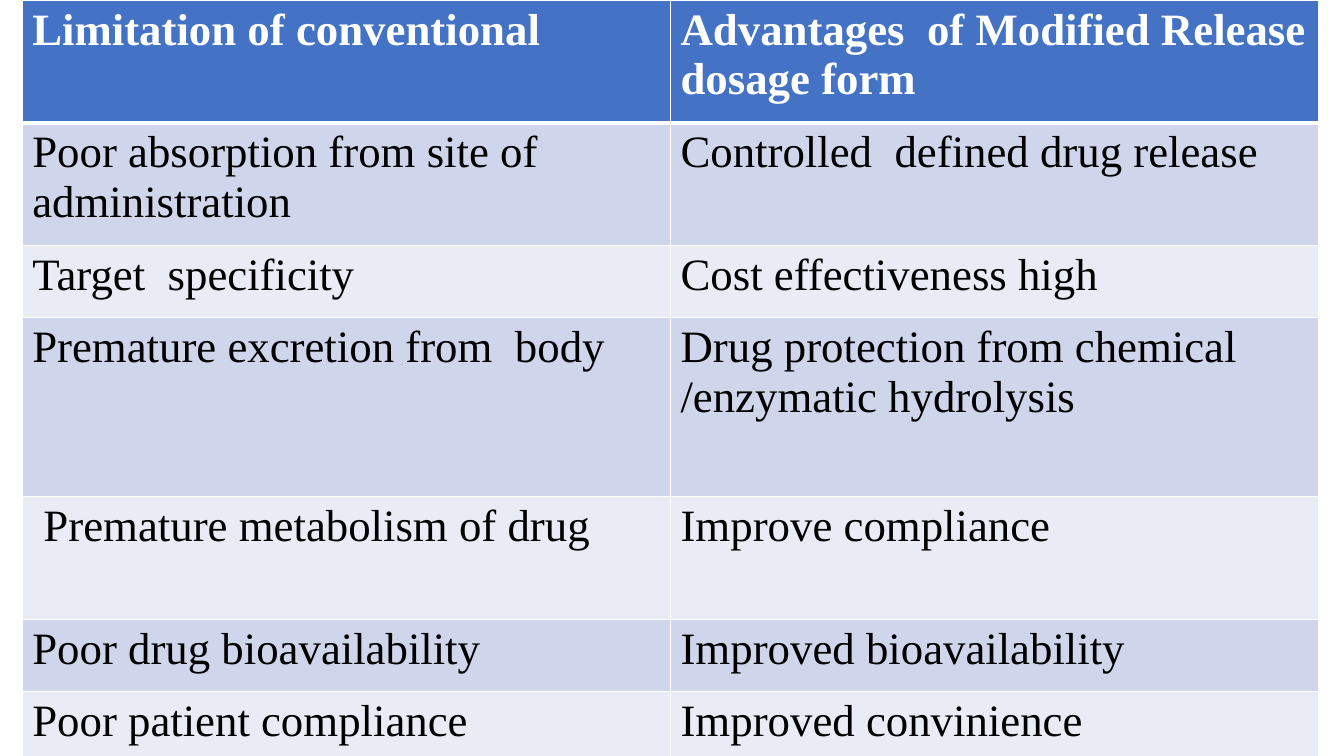
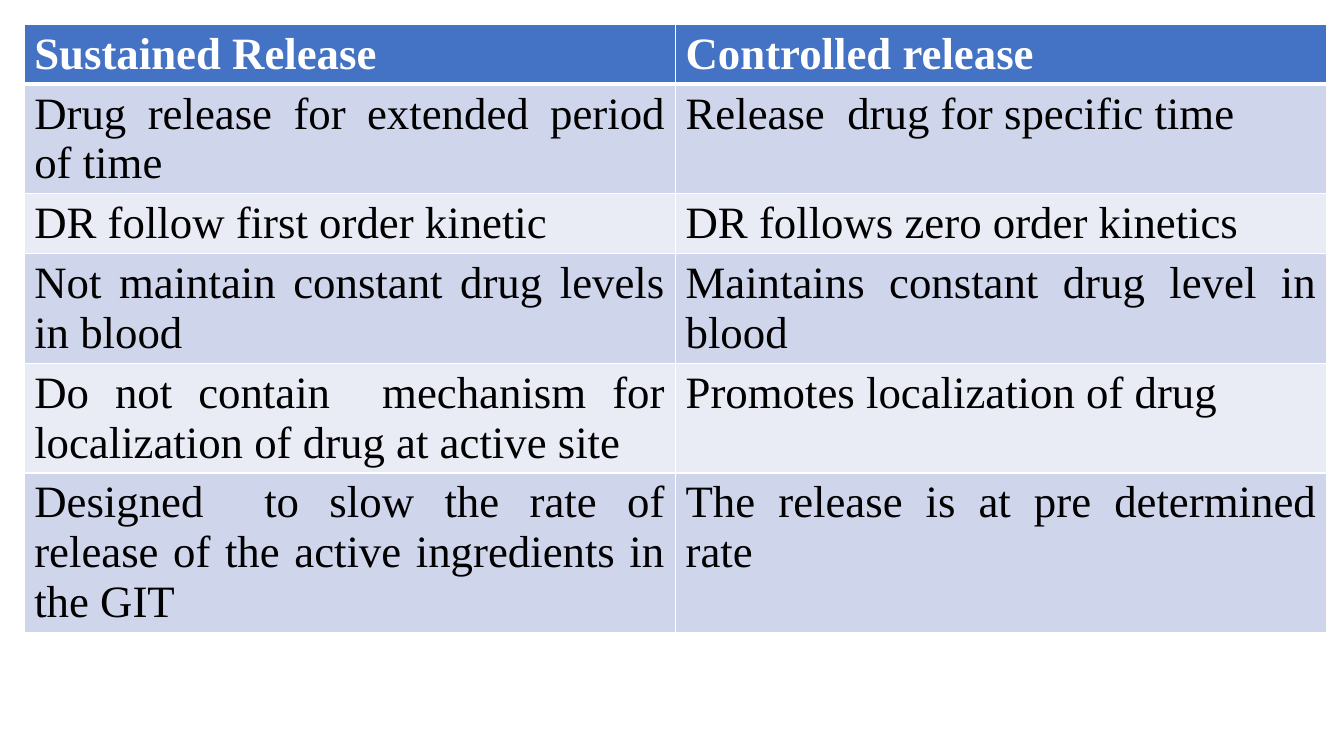
"""Two comparison tables on modified-release dosage forms."""
from dataclasses import dataclass

import lxml.etree
import pptx
import pptx.dml.color
import pptx.enum.text
import pptx.oxml.ns
import pptx.slide
import pptx.table
import pptx.util


@dataclass(frozen=True)
class Theme:
    font: str = "Times New Roman"
    size: float = 32
    header_fill: str = "4472C4"
    header_text: str = "FFFFFF"
    body_text: str = "000000"
    bands: tuple[str, str] = ("CFD5EA", "E9EBF5")
    border: str = "FFFFFF"
    thin: float = 1
    thick: float = 3


@dataclass(frozen=True)
class Row:
    height: float
    left: str
    right: str


@dataclass(frozen=True)
class Comparison:
    left: float
    top: float
    column: float
    align: pptx.enum.text.PP_ALIGN
    rows: tuple[Row, ...]


THEME = Theme()
SLIDE_WIDTH, SLIDE_HEIGHT = 13.33, 7.5
SINGLE, DOUBLE, TRIPLE = 0.71, 1.22, 1.78
COMPACT, TALL = 0.59, 1.02

COMPARISONS = (
    Comparison(0.22, 0, 6.43, pptx.enum.text.PP_ALIGN.LEFT, (
        Row(DOUBLE, "Limitation of conventional", "Advantages  of Modified Release dosage form"),
        Row(DOUBLE, "Poor absorption from site of administration", "Controlled  defined drug release"),
        Row(SINGLE, "Target  specificity", "Cost effectiveness high"),
        Row(TRIPLE, "Premature excretion from  body", "Drug protection from chemical /enzymatic hydrolysis"),
        Row(DOUBLE, " Premature metabolism of drug", "Improve compliance"),
        Row(SINGLE, "Poor drug bioavailability", "Improved bioavailability"),
        Row(SINGLE, "Poor patient compliance", "Improved convinience"),
    )),
    Comparison(0.24, 0.24, 6.46, pptx.enum.text.PP_ALIGN.JUSTIFY, (
        Row(COMPACT, "Sustained Release ", "Controlled release"),
        Row(COMPACT, "Drug release for extended period of time", "Release  drug for specific time"),
        Row(COMPACT, "DR follow first order kinetic", "DR follows zero order kinetics"),
        Row(COMPACT, "Not maintain constant drug levels in blood", "Maintains constant drug level in blood"),
        Row(TALL, "Do not contain  mechanism for localization of drug at active site",
            "Promotes localization of drug"),
        Row(TALL, "Designed  to slow the rate of release of the active ingredients in the GIT",
            "The release is at pre determined rate"),
    )),
)


def set_borders(cell: pptx.table._Cell, top: float, bottom: float) -> None:
    """Outline a cell, given the weights of its top and bottom edges in points."""
    qn = pptx.oxml.ns.qn
    props = cell._tc.get_or_add_tcPr()
    edges = {"lnL": THEME.thin, "lnR": THEME.thin, "lnT": top, "lnB": bottom}
    for tag, weight in edges.items():
        line = lxml.etree.SubElement(props, qn(f"a:{tag}"), w=str(pptx.util.Pt(weight)))
        fill = lxml.etree.SubElement(line, qn("a:solidFill"))
        lxml.etree.SubElement(fill, qn("a:srgbClr"), val=THEME.border)


def fill_cell(cell: pptx.table._Cell, text: str, index: int, align: pptx.enum.text.PP_ALIGN) -> None:
    """Write and style one cell of the row at the given index."""
    header = index == 0
    set_borders(cell, THEME.thick if index == 1 else THEME.thin, THEME.thick if header else THEME.thin)
    fill = THEME.header_fill if header else THEME.bands[(index - 1) % 2]
    color = THEME.header_text if header else THEME.body_text
    cell.fill.solid()
    cell.fill.fore_color.rgb = pptx.dml.color.RGBColor.from_string(fill)
    p = cell.text_frame.paragraphs[0]
    p.text = text
    p.alignment = align
    r = p.runs[0]
    r.font.name = THEME.font
    r.font.size = pptx.util.Pt(THEME.size)
    r.font.bold = header
    r.font.color.rgb = pptx.dml.color.RGBColor.from_string(color)


def draw_comparison(s: pptx.slide.Slide, comparison: Comparison) -> None:
    """Draw a two-column table with a header and banded rows."""
    inches = pptx.util.Inches
    rows = comparison.rows
    height = sum(row.height for row in rows)
    table = s.shapes.add_table(
        len(rows), 2, inches(comparison.left), inches(comparison.top),
        inches(2 * comparison.column), inches(height),
    ).table
    for index, row in enumerate(rows):
        table.rows[index].height = inches(row.height)
        for column, text in enumerate((row.left, row.right)):
            fill_cell(table.cell(index, column), text, index, comparison.align)


def main() -> None:
    """Build and save the presentation."""
    prs = pptx.Presentation()
    prs.slide_width = pptx.util.Inches(SLIDE_WIDTH)
    prs.slide_height = pptx.util.Inches(SLIDE_HEIGHT)
    for comparison in COMPARISONS:
        draw_comparison(prs.slides.add_slide(prs.slide_layouts[6]), comparison)
    prs.save("out.pptx")


if __name__ == "__main__":
    main()
